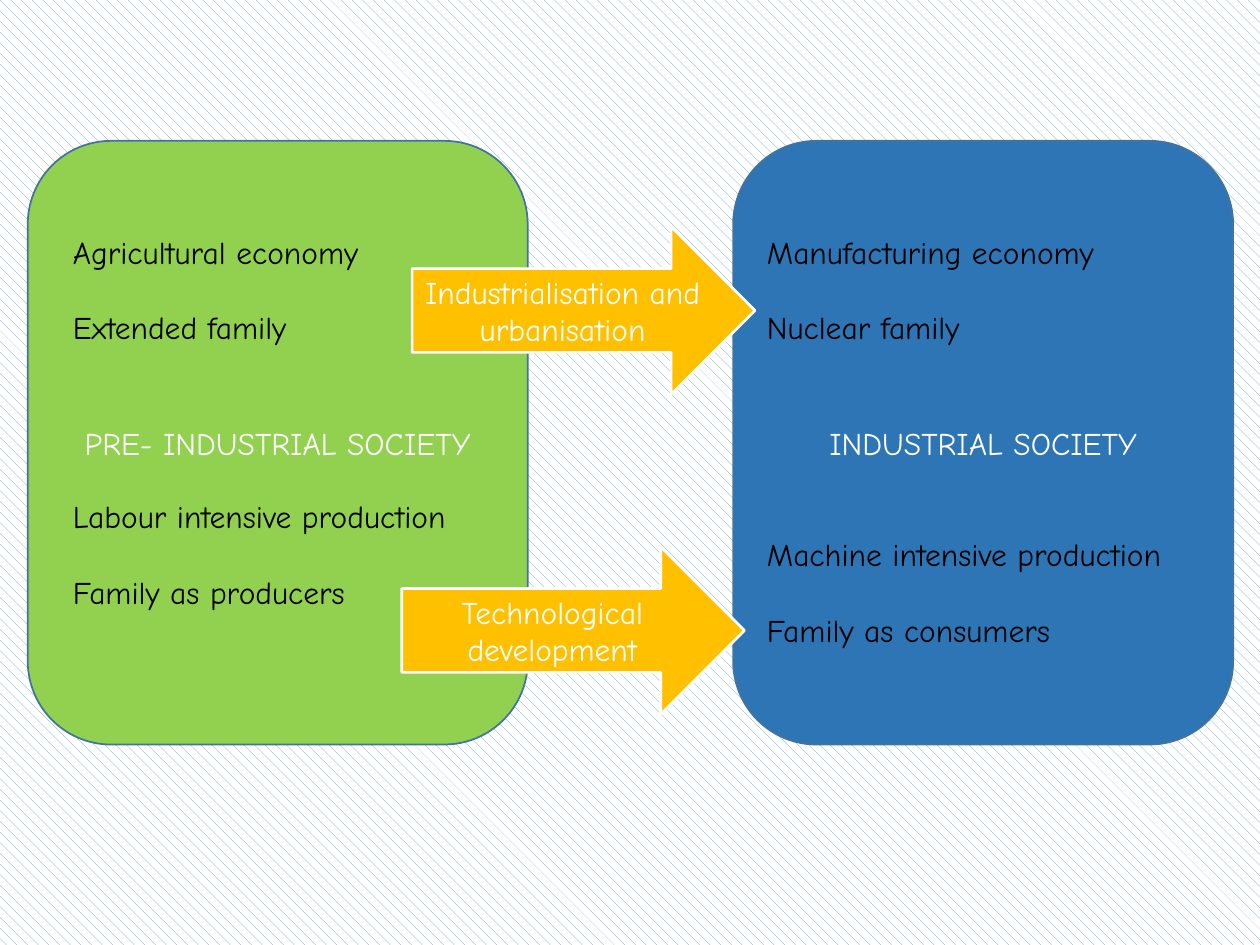
"""Build a slide contrasting pre-industrial and industrial society."""
from dataclasses import dataclass

from pptx import Presentation
from pptx.dml.color import RGBColor
from pptx.enum.dml import MSO_PATTERN
from pptx.enum.shapes import MSO_SHAPE
from pptx.enum.text import MSO_ANCHOR, MSO_AUTO_SIZE, PP_ALIGN
from pptx.util import Cm, Pt


@dataclass(frozen=True)
class Theme:
    font: str = "Comic Neue"
    size: float = 18
    line_pitch: float = 21.6
    panel_width: float = 1
    arrow_width: float = 1.5
    white: RGBColor = RGBColor.from_string("FFFFFF")
    black: RGBColor = RGBColor.from_string("000000")
    hatch: RGBColor = RGBColor.from_string("5B9BD5")
    green: RGBColor = RGBColor.from_string("92D050")
    blue: RGBColor = RGBColor.from_string("2E75B6")
    outline: RGBColor = RGBColor.from_string("43739E")
    gold: RGBColor = RGBColor.from_string("FFC000")


theme = Theme()


def add_span(para, text, color):
    span = para.add_run()
    span.text = text
    span.font.name = theme.font
    span.font.size = Pt(theme.size)
    span.font.color.rgb = color


def add_labelled_shape(page, kind, bounds, text, fill, line, line_width):
    shape = page.shapes.add_shape(kind, *map(Cm, bounds))
    shape.shadow.inherit = False
    shape.fill.solid()
    shape.fill.fore_color.rgb = fill
    shape.line.color.rgb = line
    shape.line.width = Pt(line_width)
    shape.text_frame.word_wrap = True
    shape.text_frame.vertical_anchor = MSO_ANCHOR.MIDDLE
    para = shape.text_frame.paragraphs[0]
    para.alignment = PP_ALIGN.CENTER
    add_span(para, text, theme.white)


deck = Presentation()
deck.slide_width, deck.slide_height = Cm(25.4), Cm(19.05)
page = deck.slides.add_slide(deck.slide_layouts[6])

background = page.background.fill
background.patterned()
background.pattern = MSO_PATTERN.DASHED_DOWNWARD_DIAGONAL
background.fore_color.rgb = theme.hatch
background.back_color.rgb = theme.white

societies = [
    (0.56, "PRE- INDUSTRIAL SOCIETY", theme.green),
    (14.78, "INDUSTRIAL SOCIETY", theme.blue),
]
for left, title, fill in societies:
    add_labelled_shape(page, MSO_SHAPE.ROUNDED_RECTANGLE, (left, 2.84, 10.08, 12.17),
                       title, fill, theme.outline, theme.panel_width)

feature_lists = [
    (15.21, 9.19, 8.71, [
        ("Manufacturing economy", 0),
        ("Nuclear family", 1),
        ("Machine intensive production", 5),
        ("Family as consumers", 1),
    ]),
    (1.22, 8.76, 7.95, [
        ("Agricultural economy", 0),
        ("Extended family", 1),
        ("Labour intensive production", 4),
        ("Family as producers", 1),
    ]),
]
for left, width, height, features in feature_lists:
    box = page.shapes.add_textbox(Cm(left), Cm(4.57), Cm(width), Cm(height))
    frame = box.text_frame
    frame.word_wrap = False
    frame.auto_size = MSO_AUTO_SIZE.SHAPE_TO_FIT_TEXT
    for index, (feature, lines_above) in enumerate(features):
        para = frame.add_paragraph() if index else frame.paragraphs[0]
        para.space_before = Pt(lines_above * theme.line_pitch)
        add_span(para, feature, theme.black)

changes = [
    (8.31, 4.57, "Industrialisation and urbanisation"),
    (8.1, 11.02, "Technological development"),
]
for left, top, change in changes:
    add_labelled_shape(page, MSO_SHAPE.RIGHT_ARROW, (left, top, 6.91, 3.38),
                       change, theme.gold, theme.white, theme.arrow_width)

deck.save("out.pptx")
